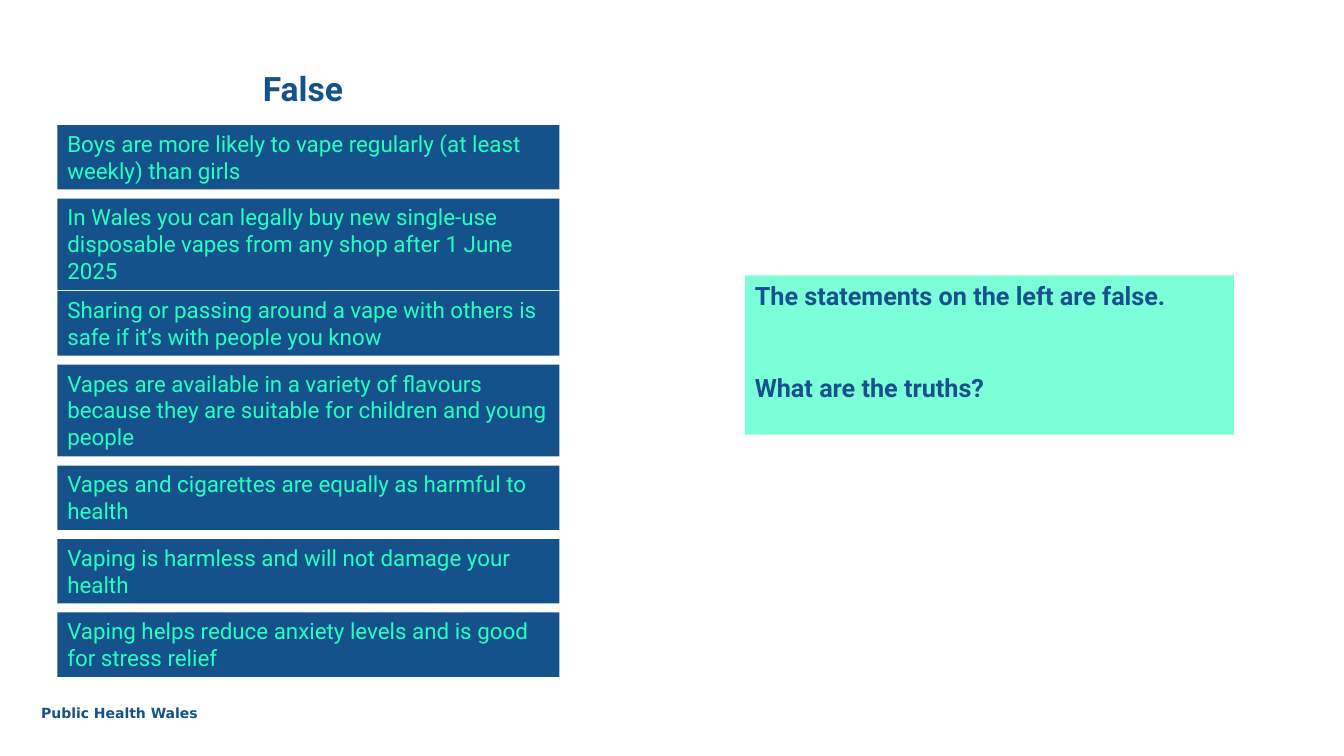
from dataclasses import dataclass

from pptx import Presentation
from pptx.dml.color import RGBColor
from pptx.enum.shapes import MSO_SHAPE
from pptx.enum.text import MSO_ANCHOR, PP_ALIGN
from pptx.shapes.autoshape import Shape
from pptx.slide import Slide
from pptx.util import Pt

NAVY = "15518B"
MINT = "24FFC0"
PALE_MINT = "7CFFD9"

CARD_LEFT, CARD_TOP, CARD_WIDTH = 41, 89.3, 358.6
CARD_HEIGHTS = {2: 46, 3: 65.5}
CARD_GAP = 6.5


@dataclass(frozen=True)
class Frame:
    left: float
    top: float
    width: float
    height: float


@dataclass(frozen=True)
class TextStyle:
    size: float
    color: str
    bold: bool = False
    font: str = "Roboto"


@dataclass(frozen=True)
class Statement:
    text: str
    lines: int = 2
    gap_after: float = CARD_GAP


STATEMENTS = [
    Statement("Boys are more likely to vape regularly (at least weekly) than girls"),
    Statement(
        "In Wales you can legally buy new single‑use disposable vapes "
        "from any shop after 1 June 2025",
        lines=3,
        gap_after=0.7,
    ),
    Statement(
        "Sharing or passing around a vape with others is safe "
        "if it’s with people you know"
    ),
    Statement(
        "Vapes are available in a variety of flavours because they are "
        "suitable for children and young people",
        lines=3,
    ),
    Statement("Vapes and cigarettes are equally as harmful to health"),
    Statement("Vaping is harmless and will not damage your health"),
    Statement("Vaping helps reduce anxiety levels and is good for stress relief"),
]


def rgb(value: str) -> RGBColor:
    return RGBColor.from_string(value)


def write_text(shape: Shape, text: str, style: TextStyle, anchor: MSO_ANCHOR) -> None:
    frame = shape.text_frame
    frame.text = text
    frame.word_wrap = True
    frame.vertical_anchor = anchor
    for paragraph in frame.paragraphs:
        paragraph.alignment = PP_ALIGN.LEFT
        for run in paragraph.runs:
            run.font.name = style.font
            run.font.size = Pt(style.size)
            run.font.bold = style.bold
            run.font.color.rgb = rgb(style.color)


def add_label(
    slide: Slide,
    box: Frame,
    text: str,
    style: TextStyle,
    anchor: MSO_ANCHOR = MSO_ANCHOR.TOP,
) -> None:
    shape = slide.shapes.add_textbox(
        Pt(box.left), Pt(box.top), Pt(box.width), Pt(box.height)
    )
    write_text(shape, text, style, anchor)


def add_card(
    slide: Slide, box: Frame, text: str, fill: str, style: TextStyle
) -> Shape:
    shape = slide.shapes.add_shape(
        MSO_SHAPE.RECTANGLE, Pt(box.left), Pt(box.top), Pt(box.width), Pt(box.height)
    )
    shape.shadow.inherit = False
    shape.fill.solid()
    shape.fill.fore_color.rgb = rgb(fill)
    shape.line.fill.background()
    write_text(shape, text, style, MSO_ANCHOR.TOP)
    return shape


def add_statements(slide: Slide) -> None:
    top = CARD_TOP
    for statement in STATEMENTS:
        height = CARD_HEIGHTS[statement.lines]
        box = Frame(CARD_LEFT, top, CARD_WIDTH, height)
        add_card(slide, box, statement.text, NAVY, TextStyle(16, MINT))
        top += height + statement.gap_after


def main() -> None:
    presentation = Presentation()
    presentation.slide_width = Pt(960)
    presentation.slide_height = Pt(540)
    slide = presentation.slides.add_slide(presentation.slide_layouts[6])

    add_label(
        slide,
        Frame(22.3, 499.7, 130.3, 19.4),
        "Public Health Wales",
        TextStyle(10, NAVY, bold=True, font="DejaVu Sans"),
    )
    add_label(
        slide,
        Frame(180.7, 45.4, 105.1, 35.3),
        "False",
        TextStyle(24, NAVY, bold=True),
        MSO_ANCHOR.BOTTOM,
    )
    add_statements(slide)
    prompt = add_card(
        slide,
        Frame(532.1, 196.6, 349.2, 113.8),
        "The statements on the left are false.\nWhat are the truths?",
        PALE_MINT,
        TextStyle(18, NAVY, bold=True),
    )
    prompt.text_frame.paragraphs[1].space_before = Pt(44)

    presentation.save("out.pptx")


if __name__ == "__main__":
    main()
